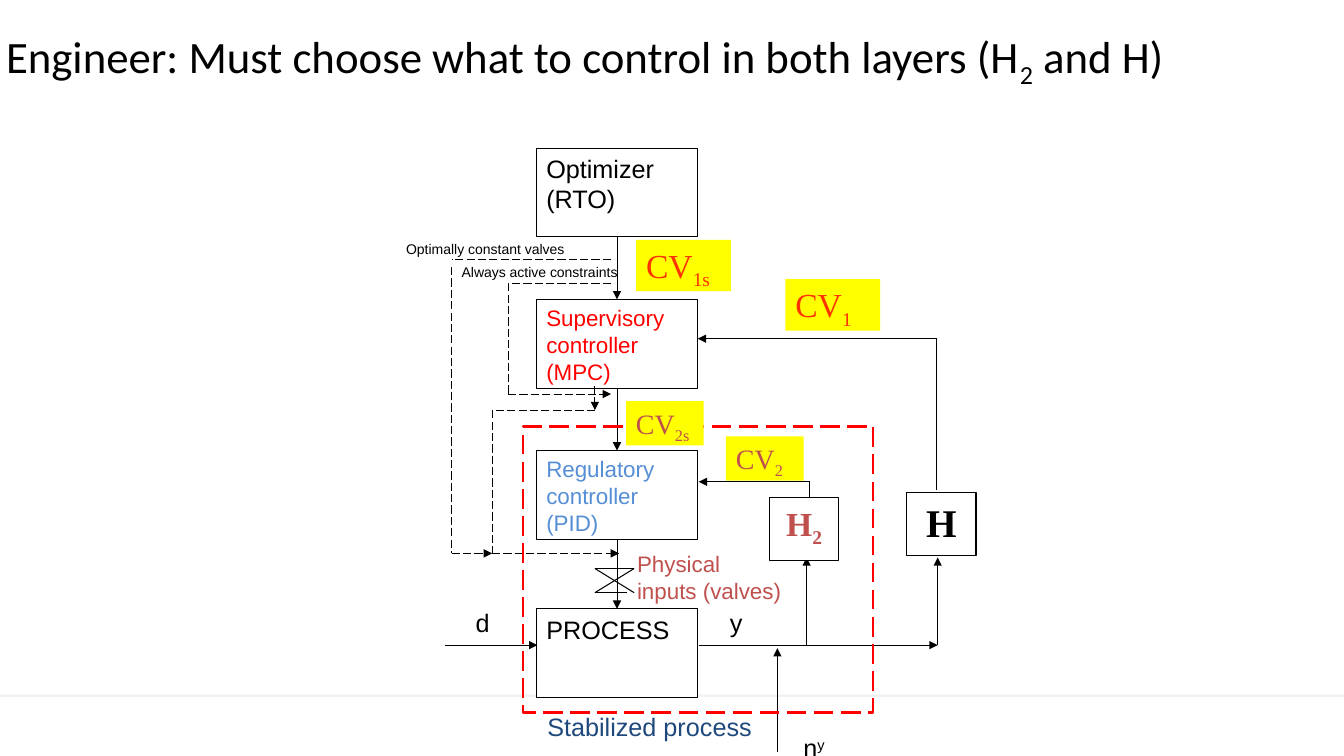
from dataclasses import dataclass
from lxml.etree import SubElement
from pptx import Presentation
from pptx.dml.color import RGBColor as RGB
from pptx.enum.dml import MSO_LINE as Dash
from pptx.enum.shapes import MSO_CONNECTOR as Conn, MSO_SHAPE as Shape
from pptx.enum.text import MSO_ANCHOR as Anchor, MSO_AUTO_SIZE as Fit, PP_ALIGN as Align
from pptx.oxml.ns import qn
from pptx.util import Inches, Pt


@dataclass(frozen=True)
class Theme:
    sans: str = "Arial"
    serif: str = "Times New Roman"
    head: str = "Calibri"
    black: str = "000000"
    white: str = "FFFFFF"
    red: str = "FF0000"
    blue: str = "558ED5"
    navy: str = "1F497D"
    brick: str = "C0504D"
    orange: str = "FF3300"
    yellow: str = "FFFF00"
    title: int = 32
    sign: int = 28
    large: int = 24
    mid: int = 20
    base: int = 18
    small: int = 16
    note: int = 10
    thin: float = 0.75
    thick: float = 1.75
    sub: int = -25000
    sup: int = 30000


T = Theme()


def write(para, parts, size, color, font=T.sans, bold=False):
    """Add runs; a part is plain text or a (text, baseline) pair."""
    for part in parts:
        text, shift = part if isinstance(part, tuple) else (part, 0)
        run = para.add_run()
        run.text = text
        run.font.name = font
        run.font.size = Pt(size)
        run.font.bold = bold
        run.font.color.rgb = RGB.from_string(color)
        if shift:
            run._r.get_or_add_rPr().set("baseline", str(shift))


def add_rect(slide, at, fill=None, line=None, width=T.thin):
    rect = slide.shapes.add_shape(Shape.RECTANGLE, *map(Inches, at))
    rect.shadow.inherit = False
    if fill:
        rect.fill.solid()
        rect.fill.fore_color.rgb = RGB.from_string(fill)
    else:
        rect.fill.background()
    if line:
        rect.line.color.rgb = RGB.from_string(line)
        rect.line.width = Pt(width)
    else:
        rect.line.fill.background()
    return rect


def add_box(slide, at, parts, size, color, fill=T.white, line=T.black,
            align=Align.LEFT, **style):
    box = add_rect(slide, at, fill, line)
    frame = box.text_frame
    frame.word_wrap = True
    frame.vertical_anchor = Anchor.TOP
    frame.paragraphs[0].alignment = align
    write(frame.paragraphs[0], parts, size, color, **style)
    return box


def add_label(slide, at, lines, size=T.base, color=T.black):
    frame = slide.shapes.add_textbox(*map(Inches, at)).text_frame
    frame.word_wrap = False
    for i, parts in enumerate(lines):
        para = frame.add_paragraph() if i else frame.paragraphs[0]
        write(para, parts, size, color)


def add_line(slide, x1, y1, x2, y2, arrow=False, dash=False):
    link = slide.shapes.add_connector(Conn.STRAIGHT, *map(Inches, (x1, y1, x2, y2)))
    link.line.color.rgb = RGB.from_string(T.black)
    link.line.width = Pt(T.thin)
    if dash:
        link.line.dash_style = Dash.LONG_DASH
    props = link._element.spPr
    if arrow:
        SubElement(props.find(qn("a:ln")), qn("a:tailEnd"), type="triangle")
    SubElement(props, qn("a:effectLst"))
    return link


def add_path(slide, points, arrow=True, dash=False):
    """Straight pieces through the points, with the arrowhead on the last."""
    pairs = list(zip(points, points[1:]))
    for i, (start, end) in enumerate(pairs, 1):
        add_line(slide, *start, *end, arrow and i == len(pairs), dash)


def add_title(slide):
    title = slide.shapes.title
    title.left, title.top, title.width, title.height = map(
        Inches, (-0.04, 0.23, 11.8, 0.64))
    frame = title.text_frame
    frame.word_wrap = False
    frame.auto_size = Fit.NONE
    frame.vertical_anchor = Anchor.TOP
    para = frame.paragraphs[0]
    para.alignment = Align.LEFT
    write(para, ["Engineer: Must choose what to control in both layers (H",
                 ("2", T.sub), " and H)"], T.title, T.black, T.head)


def add_band(slide):
    band = add_rect(slide, (-0.04, 6.91, 13.6, 0.78), T.white)
    glow = SubElement(band._element.spPr.find(qn("a:effectLst")), qn("a:outerShdw"),
                      blurRad=str(Pt(3.1)), dist=str(Pt(1.8)), dir="5400000",
                      rotWithShape="0")
    tint = SubElement(glow, qn("a:srgbClr"), val=T.black)
    SubElement(tint, qn("a:alpha"), val="35000")


def add_layers(slide):
    # Control layers, top to bottom
    layers = [
        (1.47, "Optimizer (RTO)", T.base, T.black),
        (2.97, "Supervisory controller (MPC)", T.small, T.red),
        (4.47, "Regulatory controller (PID)", T.small, T.blue),
        (6.04, "PROCESS", T.base, T.black),
    ]
    boxes = [add_box(slide, (5.32, top, 1.6, 0.88), [text], size, color)
             for top, text, size, color in layers]
    for upper, lower in zip(boxes, boxes[1:]):
        link = add_line(slide, 6.12, 2, 6.12, 3, arrow=True)
        link.begin_connect(upper, 2)
        link.end_connect(lower, 0)


def add_flows(slide):
    # Process streams and feedback
    add_path(slide, [(4.41, 6.4), (5.33, 6.4)])
    add_path(slide, [(6.93, 6.4), (9.3, 6.4)])
    add_path(slide, [(7.71, 7.46), (7.71, 6.43)])
    for x in (8, 9.3):
        add_path(slide, [(x, 6.4), (x, 5.53)])
    add_path(slide, [(8.03, 4.94), (8.03, 4.78), (6.93, 4.78)])
    add_path(slide, [(9.29, 4.86), (9.29, 3.36), (6.92, 3.36)])
    # Valve
    add_path(slide, [(6.22, 5.88), (5.9, 5.88), (6.29, 5.64), (5.9, 5.64),
                     (6.29, 5.88)], arrow=False)
    # Dashed bypasses
    add_path(slide, [(5.9, 3.83), (5.9, 4.07)], dash=True)
    add_path(slide, [(5.9, 4.07), (4.88, 4.07), (4.88, 5.49), (6.14, 5.49)], dash=True)
    add_path(slide, [(6.06, 2.57), (4.48, 2.57)], arrow=False, dash=True)
    add_path(slide, [(4.48, 2.65), (4.48, 5.49), (4.88, 5.49)], dash=True)
    add_path(slide, [(6.06, 2.81), (5.04, 2.81), (5.04, 3.91), (6.06, 3.91)], dash=True)


def add_tags(slide):
    # Measurement selections
    add_box(slide, (7.63, 4.94, 0.69, 0.62), ["H", ("2", T.sub)], T.large, T.brick,
            align=Align.CENTER, font=T.serif, bold=True)
    add_box(slide, (8.99, 4.89, 0.69, 0.62), ["H"], T.sign, T.black,
            align=Align.CENTER, font=T.serif, bold=True)
    # Stabilized region
    zone = add_rect(slide, (5.19, 4.23, 3.47, 2.84), line=T.red, width=T.thick)
    zone.line.dash_style = Dash.LONG_DASH
    # Controlled variables
    for x, y, w, h, sub, size, color in [
        (6.31, 2.38, 0.94, 0.51, "1s", T.large, T.orange),
        (7.79, 2.77, 0.94, 0.51, "1", T.large, T.orange),
        (6.21, 3.98, 0.77, 0.44, "2s", T.mid, T.brick),
        (7.2, 4.33, 0.77, 0.44, "2", T.mid, T.brick),
    ]:
        add_box(slide, (x, y, w, h), ["CV", (sub, T.sub)], size, color,
                fill=T.yellow, line=None, font=T.serif)


def add_notes(slide):
    add_label(slide, (4.62, 5.98, 0.34, 0.4), [["d"]])
    add_label(slide, (7.14, 5.98, 0.33, 0.4), [["y"]])
    add_label(slide, (7.87, 7.22, 0.42, 0.4), [["n", ("y", T.sup)]])
    add_label(slide, (5.33, 7.01, 2.23, 0.4), [["Stabilized process"]], color=T.navy)
    add_label(slide, (6.22, 5.41, 1.63, 0.64), [["Physical"], ["inputs (valves)"]],
              T.small, T.brick)
    add_label(slide, (3.93, 2.34, 1.77, 0.27), [["Optimally constant valves"]], T.note)
    add_label(slide, (4.48, 2.57, 1.75, 0.27), [["Always active constraints"]], T.note)


def main():
    deck = Presentation()
    deck.slide_width, deck.slide_height = Inches(13.33), Inches(7.5)
    slide = deck.slides.add_slide(deck.slide_layouts[5])
    add_title(slide)
    add_band(slide)
    add_layers(slide)
    add_flows(slide)
    add_tags(slide)
    add_notes(slide)
    deck.save("out.pptx")


if __name__ == "__main__":
    main()
